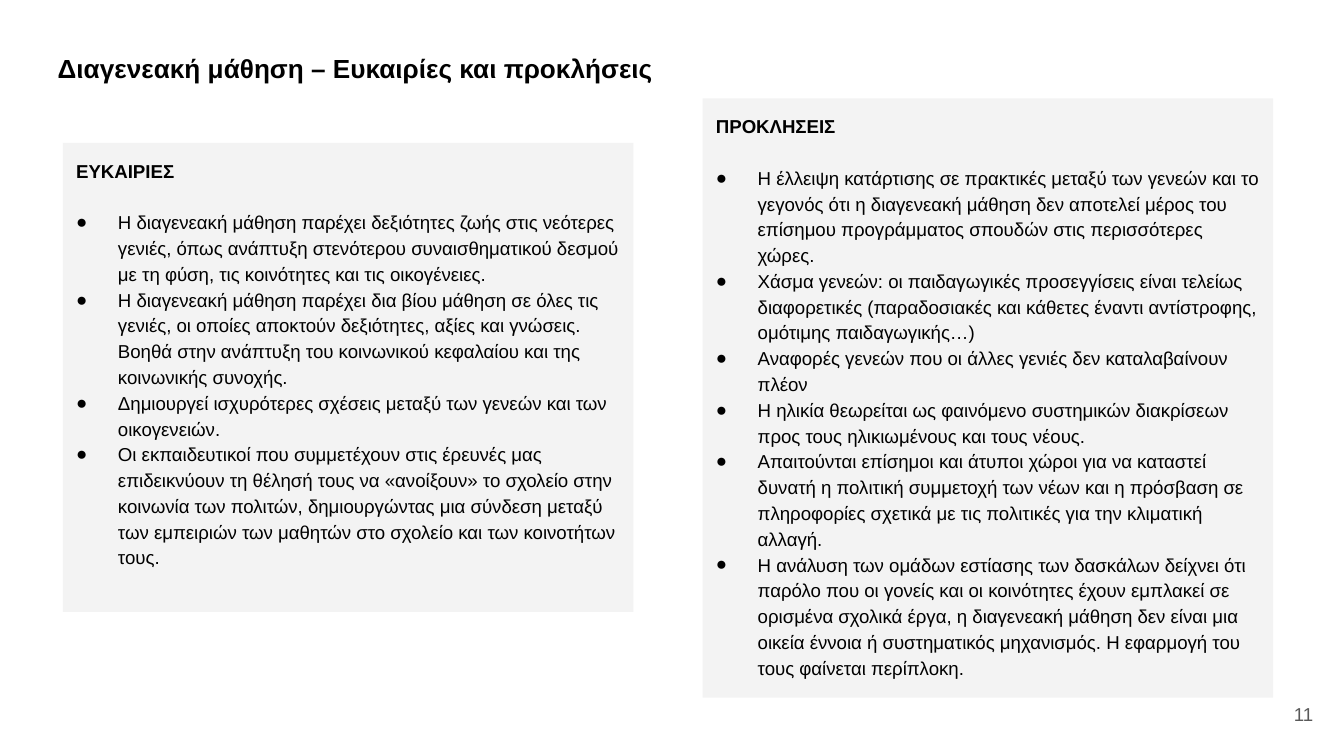
from lxml.etree import SubElement
from pptx import Presentation
from pptx.dml.color import RGBColor
from pptx.enum.text import MSO_ANCHOR, MSO_AUTO_SIZE, PP_ALIGN
from pptx.oxml.ns import qn
from pptx.util import Cm, Pt

BLACK = RGBColor(0, 0, 0)
GREY = RGBColor(0x59, 0x59, 0x59)
PALE = RGBColor(0xF3, 0xF3, 0xF3)

GAINS = [
    "Η διαγενεακή μάθηση παρέχει δεξιότητες ζωής στις νεότερες γενιές, όπως ανάπτυξη στενότερου συναισθηματικού δεσμού με τη φύση, τις κοινότητες και τις οικογένειες.",
    "Η διαγενεακή μάθηση παρέχει δια βίου μάθηση σε όλες τις γενιές, οι οποίες αποκτούν δεξιότητες, αξίες και γνώσεις. Βοηθά στην ανάπτυξη του κοινωνικού κεφαλαίου και της κοινωνικής συνοχής.",
    "Δημιουργεί ισχυρότερες σχέσεις μεταξύ των γενεών και των οικογενειών.",
    "Οι εκπαιδευτικοί που συμμετέχουν στις έρευνές μας επιδεικνύουν τη θέλησή τους να «ανοίξουν» το σχολείο στην κοινωνία των πολιτών, δημιουργώντας μια σύνδεση μεταξύ των εμπειριών των μαθητών στο σχολείο και των κοινοτήτων τους.",
]
TESTS = [
    "Η έλλειψη κατάρτισης σε πρακτικές μεταξύ των γενεών και το γεγονός ότι η διαγενεακή μάθηση δεν αποτελεί μέρος του επίσημου προγράμματος σπουδών στις περισσότερες χώρες.",
    "Χάσμα γενεών: οι παιδαγωγικές προσεγγίσεις είναι τελείως διαφορετικές (παραδοσιακές και κάθετες έναντι αντίστροφης, ομότιμης παιδαγωγικής…)",
    "Αναφορές γενεών που οι άλλες γενιές δεν καταλαβαίνουν πλέον",
    "Η ηλικία θεωρείται ως φαινόμενο συστημικών διακρίσεων προς τους ηλικιωμένους και τους νέους.",
    "Απαιτούνται επίσημοι και άτυποι χώροι για να καταστεί δυνατή η πολιτική συμμετοχή των νέων και η πρόσβαση σε πληροφορίες σχετικά με τις πολιτικές για την κλιματική αλλαγή.",
    "Η ανάλυση των ομάδων εστίασης των δασκάλων δείχνει ότι παρόλο που οι γονείς και οι κοινότητες έχουν εμπλακεί σε ορισμένα σχολικά έργα, η διαγενεακή μάθηση δεν είναι μια οικεία έννοια ή συστηματικός μηχανισμός. Η εφαρμογή του τους φαίνεται περίπλοκη.",
]


def place(shape, box, anchor=MSO_ANCHOR.TOP):
    shape.left, shape.top, shape.width, shape.height = map(Cm, box)
    frame = shape.text_frame
    frame.word_wrap = True
    frame.auto_size = MSO_AUTO_SIZE.NONE
    frame.vertical_anchor = anchor
    frame.margin_left = frame.margin_right = Cm(0.25)
    frame.margin_top = frame.margin_bottom = Cm(0.25)
    return frame


def style(para, size, bold=False, color=BLACK, align=PP_ALIGN.LEFT):
    para.alignment = align
    para.space_before = Pt(0)
    font = para.font
    font.name, font.size, font.bold = "Arial", Pt(size), bold
    font.color.rgb = color


def indent(para, left, first, mark=None):
    props = para._p.get_or_add_pPr()
    props.set("marL", str(Cm(left)))
    props.set("indent", str(Cm(first)))
    if mark:
        tint = SubElement(props, qn("a:buClr"))
        SubElement(tint, qn("a:srgbClr"), val=str(BLACK))
        SubElement(props, qn("a:buFont"), typeface="Arial")
        SubElement(props, qn("a:buChar"), char=mark)
    else:
        SubElement(props, qn("a:buNone"))
    props.append(props.find(qn("a:defRPr")))


def add_title(shape, box, text):
    frame = place(shape, box)
    frame.text = text
    style(frame.paragraphs[0], 14, bold=True)


def add_panel(shape, box, head, items):
    frame = place(shape, box)
    shape.fill.solid()
    shape.fill.fore_color.rgb = PALE
    frame.text = "\n".join([head, *items])
    for n, para in enumerate(frame.paragraphs):
        style(para, 10, bold=n == 0)
        para.line_spacing = 1.15
        para.space_after = Pt(0 if n else 13.8)
        if n:
            indent(para, 0.79, -0.79, "●")
        else:
            indent(para, 0, 0)


def add_number(slide, box, text):
    frame = place(slide.shapes.add_textbox(0, 0, 0, 0), box, MSO_ANCHOR.MIDDLE)
    frame.text = text
    style(frame.paragraphs[0], 10, color=GREY, align=PP_ALIGN.RIGHT)


def main():
    deck = Presentation()
    deck.slide_width, deck.slide_height = Cm(25.4), Cm(14.28)
    slide = deck.slides.add_slide(deck.slide_layouts[3])
    title, left, right = slide.placeholders
    add_title(title, (0.84, 0.74, 19.86, 1.12),
              "Διαγενεακή μάθηση – Ευκαιρίες και προκλήσεις")
    add_panel(left, (1.19, 2.7, 10.78, 8.86), "ΕΥΚΑΙΡΙΕΣ", GAINS)
    add_panel(right, (13.28, 1.86, 10.78, 11.32), "ΠΡΟΚΛΗΣΕΙΣ", TESTS)
    add_number(slide, (23.55, 12.95, 1.52, 1.09), "11")
    deck.save("out.pptx")


if __name__ == "__main__":
    main()
